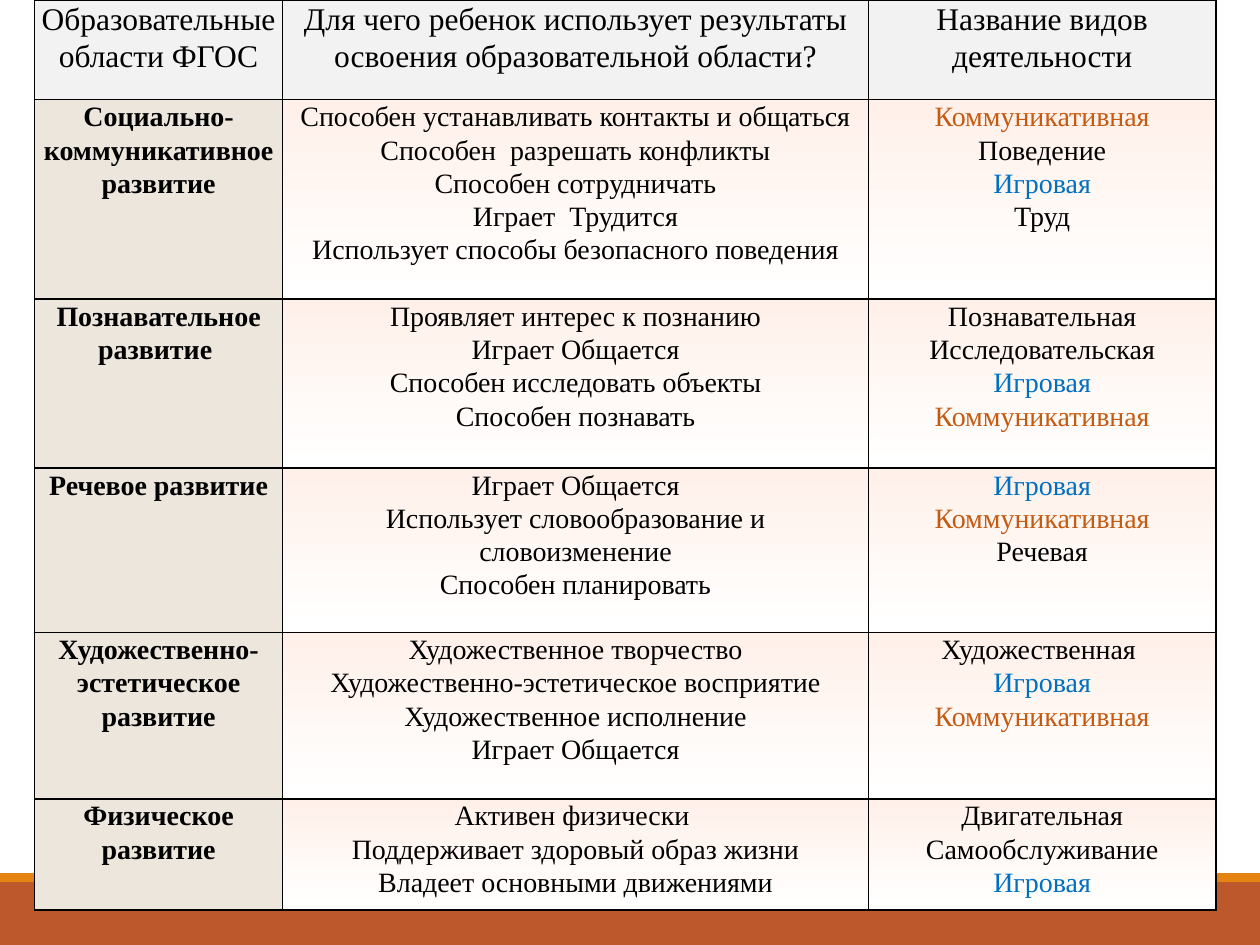
from pptx import Presentation
from pptx.dml.color import RGBColor
from pptx.enum.shapes import MSO_SHAPE
from pptx.enum.text import PP_ALIGN
from pptx.oxml import parse_xml
from pptx.oxml.ns import nsdecls
from pptx.util import Pt

FONT = "Times New Roman"
BLACK = "000000"
ACCENTS = {"Игровая": "0070C0", "Коммуникативная": "C55A11"}
BANDS = [(504, 36, "BD582C"), (499, 5, "E48312")]
LEFT = 19.8
COLUMN_WIDTHS = [141.7, 334.8, 198.5]
ROW_HEIGHTS = [57, 114, 96.5, 94, 95, 63.5]

HEADINGS = [
    ["Образовательные области ФГОС"],
    ["Для чего ребенок использует результаты освоения образовательной области?"],
    ["Название видов деятельности"],
]
AREAS = [
    (["Социально-коммуникативное развитие"],
     ["Способен устанавливать контакты и общаться", "Способен  разрешать конфликты",
      "Способен сотрудничать", "Играет  Трудится",
      "Использует способы безопасного поведения"],
     ["Коммуникативная", "Поведение", "Игровая", "Труд"]),
    (["Познавательное развитие "],
     ["Проявляет интерес к познанию", "Играет Общается",
      "Способен исследовать объекты", "Способен познавать"],
     ["Познавательная", "Исследовательская", "Игровая", "Коммуникативная"]),
    (["Речевое развитие"],
     ["Играет Общается", "Использует словообразование и словоизменение",
      "Способен планировать"],
     ["Игровая", "Коммуникативная", "Речевая"]),
    (["Художественно-эстетическое развитие"],
     ["Художественное творчество", "Художественно-эстетическое восприятие",
      "Художественное исполнение", "Играет Общается"],
     ["Художественная ", "Игровая", "Коммуникативная"]),
    (["Физическое развитие"],
     ["Активен физически ", "Поддерживает здоровый образ жизни",
      "Владеет основными движениями"],
     ["Двигательная", "Самообслуживание", "Игровая"]),
]


def color(value):
    """Turn a hex string into a colour."""
    return RGBColor.from_string(value)


def add_band(page, top, height, fill):
    """Draw a full-width band at the foot of the page."""
    band = page.shapes.add_shape(MSO_SHAPE.RECTANGLE, 0, Pt(top), Pt(720), Pt(height))
    band.shadow.inherit = False
    band.fill.solid()
    band.fill.fore_color.rgb = color(fill)
    band.line.fill.background()


def add_borders(cell):
    """Put a thin black line on each side of a cell."""
    properties = cell._tc.get_or_add_tcPr()
    for place, side in enumerate(("lnL", "lnR", "lnT", "lnB")):
        properties.insert(place, parse_xml(
            f'<a:{side} {nsdecls("a")} w="12700"><a:solidFill>'
            f'<a:srgbClr val="{BLACK}"/></a:solidFill></a:{side}>'))


def fill_cell(cell, colors):
    """Fill a cell with one colour, or with two from top to bottom."""
    if len(colors) == 1:
        cell.fill.solid()
        cell.fill.fore_color.rgb = color(colors[0])
        return
    cell.fill.gradient()
    cell.fill.gradient_angle = 270
    for stop, value in zip(cell.fill.gradient_stops, colors):
        stop.color.rgb = color(value)


def write_cell(cell, lines, size, bold):
    """Write centred lines, tinting the recurring activities."""
    cell.margin_left = cell.margin_right = Pt(3.6)
    cell.margin_top = cell.margin_bottom = 0
    cell.text = "\n".join(lines)
    for para in cell.text_frame.paragraphs:
        para.alignment = PP_ALIGN.CENTER
        para.line_spacing = 1.07
        para.font.name = FONT
        para.font.size = Pt(size)
        para.font.bold = bold
        para.font.color.rgb = color(ACCENTS.get(para.text, BLACK))


def add_areas_table(page):
    """Build the table of educational areas."""
    rows = [HEADINGS, *AREAS]
    frame = page.shapes.add_table(
        len(rows), len(COLUMN_WIDTHS), Pt(LEFT), 0,
        Pt(sum(COLUMN_WIDTHS)), Pt(sum(ROW_HEIGHTS)))
    table = frame.table
    for column, width in zip(table.columns, COLUMN_WIDTHS):
        column.width = Pt(width)
    for row, height in zip(table.rows, ROW_HEIGHTS):
        row.height = Pt(height)
    for r, row in enumerate(rows):
        for c, lines in enumerate(row):
            cell = table.cell(r, c)
            if r == 0:
                colors = ["F2F2F2"]
            elif c == 0:
                colors = ["ECE6DD"]
            else:
                colors = ["FFF0EA", "FFFFFF"]
            write_cell(cell, lines, 18 if r == 0 else 16, r > 0 and c == 0)
            fill_cell(cell, colors)
            add_borders(cell)


def main():
    """Build and save the slide."""
    deck = Presentation()
    deck.slide_width, deck.slide_height = Pt(720), Pt(540)
    page = deck.slides.add_slide(deck.slide_layouts[6])
    for band in BANDS:
        add_band(page, *band)
    add_areas_table(page)
    deck.save("out.pptx")


if __name__ == "__main__":
    main()
